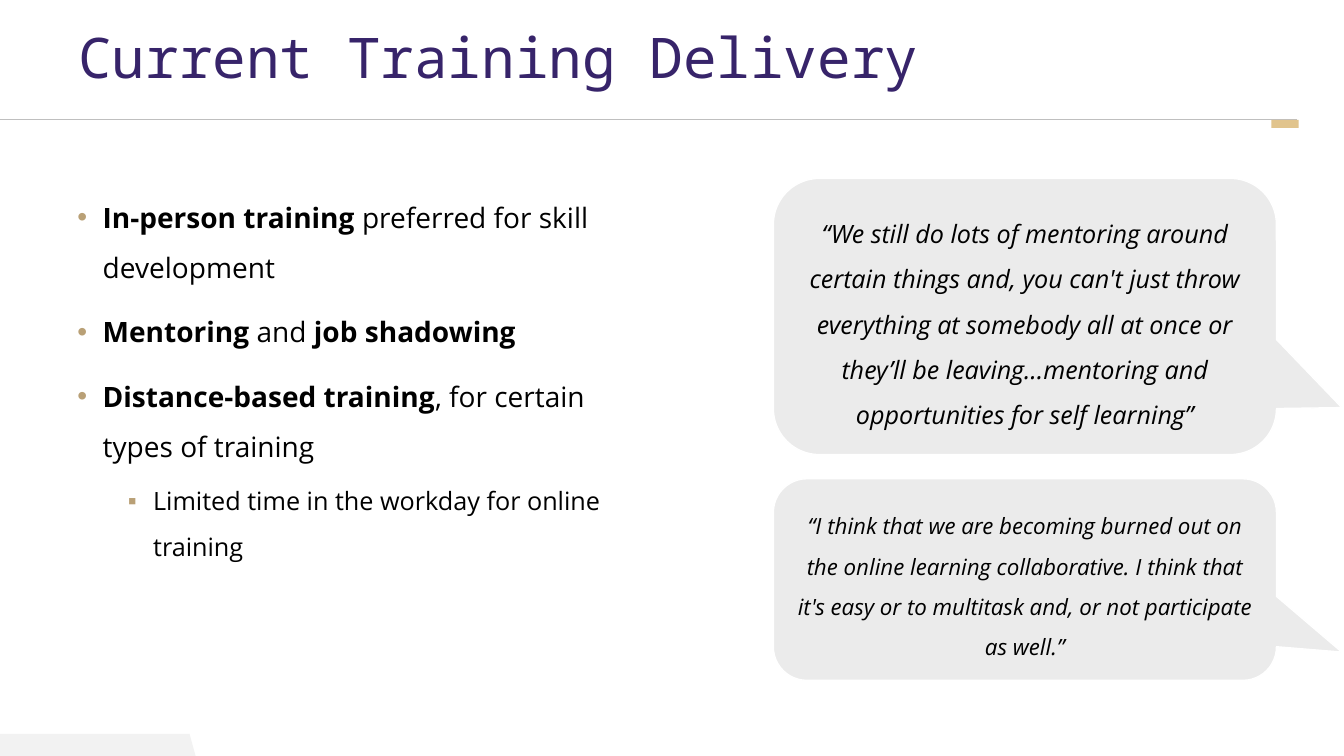
from dataclasses import dataclass

from lxml import etree
from pptx import Presentation
from pptx.dml.color import RGBColor
from pptx.enum.shapes import MSO_CONNECTOR, MSO_SHAPE
from pptx.enum.text import MSO_ANCHOR, PP_ALIGN
from pptx.oxml.ns import qn
from pptx.util import Inches, Pt

STRAIGHT = MSO_CONNECTOR.STRAIGHT
RECTANGLE = MSO_SHAPE.RECTANGLE
CALLOUT = MSO_SHAPE.ROUNDED_RECTANGULAR_CALLOUT
MIDDLE = MSO_ANCHOR.MIDDLE
CENTER = PP_ALIGN.CENTER


@dataclass(frozen=True)
class Theme:
    title_font: str = "Noto Sans Mono"
    body_font: str = "Open Sans"
    title_size: int = 40
    body_size: int = 20
    detail_size: int = 18
    small_size: int = 16
    purple: str = "37246A"
    gold: str = "E1C48D"
    bullet: str = "B9A076"
    rule: str = "BFBFBF"
    footer: str = "F2F2F2"
    bubble: str = "EBEBEB"
    black: str = "000000"
    white: str = "FFFFFF"


THEME = Theme()

# Each bullet: level, then (text, bold) runs
BULLETS = [
    (0, [("In-person training", True), (" preferred for skill development", False)]),
    (0, [("Mentoring", True), (" and ", False), ("job shadowing", True)]),
    (0, [("Distance-based training", True), (", for certain types of training", False)]),
    (1, [("Limited time in the workday for online training", False)]),
]

# Each quote: top, height, tail position, text size, text
QUOTES = [
    (1.77, 2.74, (0.63, 0.33), THEME.detail_size,
     "“We still do lots of mentoring around certain things and, you can't just throw "
     "everything at somebody all at once or they’ll be leaving…mentoring and "
     "opportunities for self learning”"),
    (4.75, 2, (0.63, 0.36), THEME.small_size,
     "“I think that we are becoming burned out on the online learning collaborative. "
     "I think that it's easy or to multitask and, or not participate as well.”"),
]


def color(value):
    return RGBColor.from_string(value)


def style(font, name, size, value, bold=False, italic=False):
    font.name = name
    font.size = Pt(size)
    font.color.rgb = color(value)
    font.bold = bold
    font.italic = italic


def fill_flat(shape, value):
    shape.shadow.inherit = False
    shape.fill.solid()
    shape.fill.fore_color.rgb = color(value)
    shape.line.fill.background()


def add_text_box(page, left, top, width, height):
    box = page.shapes.add_textbox(Inches(left), Inches(top), Inches(width), Inches(height))
    box.text_frame.word_wrap = True
    return box.text_frame


def add_decoration(page):
    """Footer tab, header rule and the gold marker at its end."""
    builder = page.shapes.build_freeform(Inches(0), Inches(7.5))
    corners = [(1.94, 7.5), (1.88, 7.28), (0, 7.28)]
    builder.add_line_segments([(Inches(x), Inches(y)) for x, y in corners])
    fill_flat(builder.convert_to_shape(), THEME.footer)

    rule = page.shapes.add_connector(
        STRAIGHT, Inches(0), Inches(1.19), Inches(12.86), Inches(1.19))
    rule.line.color.rgb = color(THEME.rule)
    rule.line.width = Pt(0.75)
    etree.SubElement(rule._element.spPr, qn("a:effectLst"))

    marker = page.shapes.add_shape(
        RECTANGLE, Inches(12.61), Inches(1.19), Inches(0.27), Inches(0.08))
    fill_flat(marker, THEME.gold)


def add_title(page, text):
    frame = add_text_box(page, 0.68, 0, 11.5, 1.19)
    frame.vertical_anchor = MIDDLE
    frame.text = text
    para = frame.paragraphs[0]
    para.line_spacing = 0.9
    style(para.runs[0].font, THEME.title_font, THEME.title_size, THEME.purple)


def set_bullet(para, level):
    properties = para._p.get_or_add_pPr()
    properties.set("marL", str(Inches(0.25 + 0.5 * level)))
    properties.set("indent", str(Inches(-0.25)))
    bullet_color = etree.SubElement(properties, qn("a:buClr"))
    etree.SubElement(bullet_color, qn("a:srgbClr"), val=THEME.bullet)
    etree.SubElement(properties, qn("a:buFont"), typeface="Arial")
    etree.SubElement(properties, qn("a:buChar"), char="•▪"[level])


def add_bullets(page, bullets):
    frame = add_text_box(page, 0.67, 1.77, 5.99, 3.99)
    frame.margin_right = Inches(0.4)
    for index, (level, spans) in enumerate(bullets):
        para = frame.add_paragraph() if index else frame.paragraphs[0]
        para.level = level
        set_bullet(para, level)
        para.line_spacing = 1.5
        if index:
            para.space_before = Pt(5 if level else 10)
        size = THEME.detail_size if level else THEME.body_size
        for text, bold in spans:
            span = para.add_run()
            span.text = text
            style(span.font, THEME.body_font, size, THEME.black, bold=bold)


def add_quote(page, top, height, tail, size, text):
    bubble = page.shapes.add_shape(
        CALLOUT, Inches(7.67), Inches(top), Inches(4.99), Inches(height))
    bubble.adjustments[0], bubble.adjustments[1] = tail
    fill_flat(bubble, THEME.bubble)
    bubble.line.color.rgb = color(THEME.white)
    bubble.line.width = Pt(1)
    frame = bubble.text_frame
    frame.word_wrap = True
    frame.vertical_anchor = MIDDLE
    frame.text = text
    para = frame.paragraphs[0]
    para.alignment = CENTER
    para.line_spacing = 1.5
    style(para.runs[0].font, THEME.body_font, size, THEME.black, italic=True)


def main():
    deck = Presentation()
    deck.slide_width = Inches(13.33)
    deck.slide_height = Inches(7.5)
    page = deck.slides.add_slide(deck.slide_layouts[6])
    add_decoration(page)
    add_title(page, "Current Training Delivery")
    add_bullets(page, BULLETS)
    for quote in QUOTES:
        add_quote(page, *quote)
    deck.save("out.pptx")


if __name__ == "__main__":
    main()
